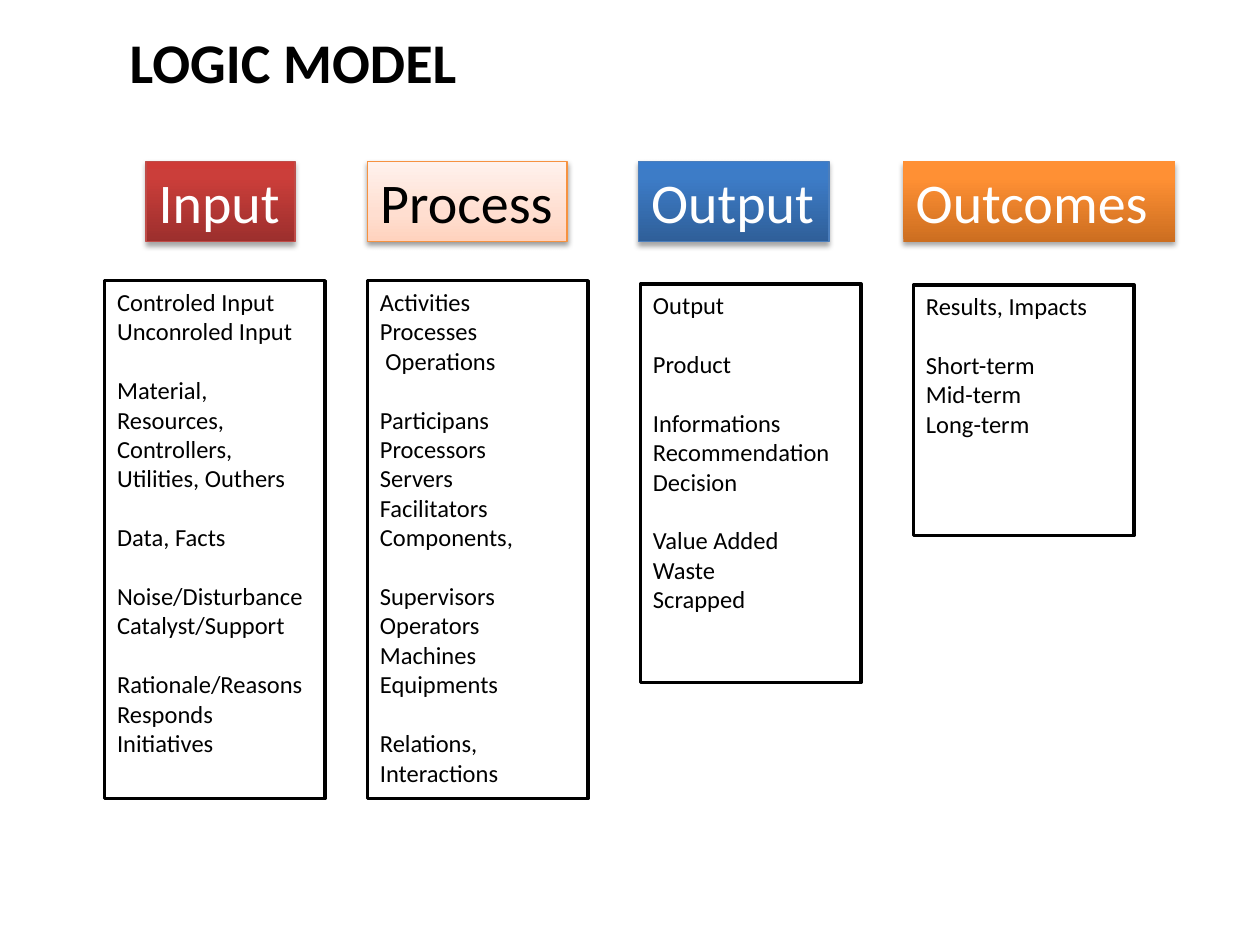
from copy import deepcopy
from dataclasses import dataclass

from lxml.etree import SubElement as Sub
from pptx import Presentation
from pptx.dml.color import RGBColor as Rgb
from pptx.enum.shapes import MSO_SHAPE as Kind
from pptx.enum.text import MSO_ANCHOR as Anchor, PP_ALIGN as Align
from pptx.oxml.ns import qn
from pptx.util import Pt


@dataclass(frozen=True)
class Theme:
    font: str = "Calibri"
    big: float = 32
    small: float = 14
    gap: float = 16.8
    ink: str = "000000"
    paper: str = "FFFFFF"
    red: tuple = ((0, "9C2F2D"), (80, "CB3E3A"), (100, "CE3B37"))
    peach: tuple = ((0, "FFD2BD"), (35, "FFDED0"), (100, "FFF2ED"))
    blue: tuple = ((0, "2F5F99"), (80, "3D7CC7"), (100, "3A7CCB"))
    orange: tuple = ((0, "CC6E20"), (80, "FF9034"), (100, "FF9136"))
    edges: tuple = ("BF4C48", "F69240", "4B7EBC")


T = Theme()
HEAD_TOP, HEAD_HIGH, LIST_WIDE = 92.2, 46, 126

# name, left, width, stops, edge, text colour, shadow (opacity, distance)
HEADS = [
    ("Input", 83.5, 85, T.red, T.edges[0], T.paper, (35, 1.8)),
    ("Process", 210.2, 113.8, T.peach, T.edges[1], T.ink, (38, 1.6)),
    ("Output", 365, 108.7, T.blue, T.edges[2], T.paper, (35, 1.8)),
    ("Outcomes", 516.2, 155.5, T.orange, None, T.paper, (35, 1.8)),
]

# left, top, height, groups of lines
LISTS = [
    (59.8, 160.4, 296, [
        ["Controled Input", "Unconroled Input"],
        ["Material,", "Resources,", "Controllers,", "Utilities, Outhers"],
        ["Data, Facts"],
        ["Noise/Disturbance", "Catalyst/Support"],
        ["Rationale/Reasons", "Responds", "Initiatives"]]),
    (210, 160.4, 296, [
        ["Activities", "Processes", "Operations"],
        ["Participans", "Processors", "Servers", "Facilitators",
         "Components,"],
        ["Supervisors", "Operators", "Machines", "Equipments"],
        ["Relations,", "Interactions"]]),
    (366, 162.2, 227.8, [
        ["Output"],
        ["Product"],
        ["Informations", "Recommendation", "Decision"],
        ["Value Added", "Waste", "Scrapped"]]),
    (522, 162.8, 143.2, [
        ["Results, Impacts"],
        ["Short-term", "Mid-term", "Long-term"]]),
]
INDENTS = {"Operations": 3.2}


def write(frame, groups, size, color, bold=False):
    """Fill a frame with one paragraph a line, and a gap before each group."""
    frame.word_wrap = True
    frame.vertical_anchor = Anchor.TOP
    first = True
    for group in groups:
        for row, line in enumerate(group):
            para = frame.paragraphs[0] if first else frame.add_paragraph()
            para.alignment = Align.LEFT
            if row == 0 and not first:
                para.space_before = Pt(T.gap)
            if line in INDENTS:
                props = para._p.get_or_add_pPr()
                props.set("marL", str(Pt(INDENTS[line])))
            run = para.add_run()
            run.text = line
            style = {"name": T.font, "size": Pt(size), "bold": bold}
            for key, value in style.items():
                setattr(run.font, key, value)
            run.font.color.rgb = Rgb.from_string(color)
            first = False


def add_box(slide, left, top, wide, high, edge, weight):
    box = slide.shapes.add_shape(
        Kind.RECTANGLE, Pt(left), Pt(top), Pt(wide), Pt(high))
    box.shadow.inherit = False
    if edge:
        box.line.color.rgb = Rgb.from_string(edge)
        box.line.width = Pt(weight)
    else:
        box.line.fill.background()
    return box


def shade(box, stops):
    """Give a box a gradient that runs from bottom to top."""
    box.fill.gradient()
    box.fill.gradient_angle = 90
    marks = box._element.spPr.find(".//" + qn("a:gsLst"))
    while len(marks) < len(stops):
        marks.append(deepcopy(marks[0]))
    for mark, (place, color) in zip(box.fill.gradient_stops, stops):
        mark.position = place / 100
        mark.color.rgb = Rgb.from_string(color)


def drop(box, dark, dist):
    """Cast a soft shadow straight down."""
    holder = box._element.spPr.find(qn("a:effectLst"))
    cast = Sub(holder, qn("a:outerShdw"), blurRad=str(Pt(3.1)),
               dist=str(Pt(dist)), dir="5400000", rotWithShape="0")
    color = Sub(cast, qn("a:srgbClr"), val=T.ink)
    Sub(color, qn("a:alpha"), val=str(dark * 1000))


def add_head(slide, name, left, wide, stops, edge, color, shadow):
    box = add_box(slide, left, HEAD_TOP, wide, HEAD_HIGH, edge, 0.75)
    shade(box, stops)
    drop(box, *shadow)
    box.text_frame.margin_right = 0
    write(box.text_frame, [[name]], T.big, color)


def add_list(slide, left, top, high, groups):
    box = add_box(slide, left, top, LIST_WIDE, high, T.ink, 2)
    box.fill.solid()
    box.fill.fore_color.rgb = Rgb.from_string(T.paper)
    write(box.text_frame, groups, T.small, T.ink)


def add_title(slide, text):
    box = slide.shapes.add_textbox(Pt(67), Pt(12.2), Pt(288), Pt(46))
    write(box.text_frame, [[text]], T.big, T.ink, bold=True)


def main():
    deck = Presentation()
    deck.slide_width, deck.slide_height = Pt(720), Pt(540)
    slide = deck.slides.add_slide(deck.slide_layouts[6])
    for head in HEADS:
        add_head(slide, *head)
    for item in LISTS:
        add_list(slide, *item)
    add_title(slide, "LOGIC MODEL")
    deck.save("out.pptx")


if __name__ == "__main__":
    main()
